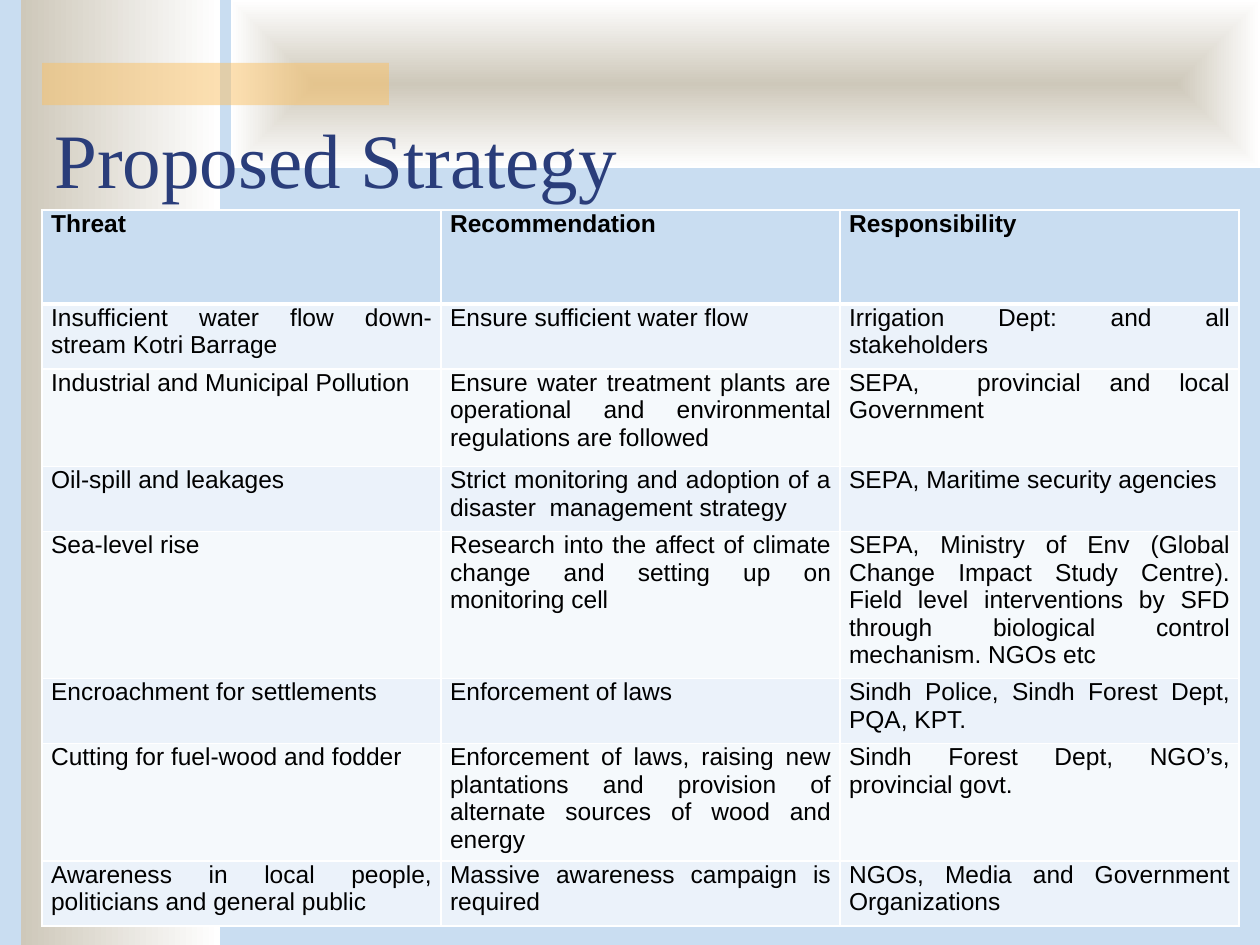
from lxml import etree
from pptx import Presentation
from pptx.dml.color import RGBColor
from pptx.enum.shapes import MSO_SHAPE
from pptx.enum.text import MSO_ANCHOR, PP_ALIGN
from pptx.oxml import parse_xml
from pptx.oxml.ns import nsdecls, qn
from pptx.util import Cm, Pt

COLORS = {
    "sky": "C9DDF1", "stone": "CEC8BA", "white": "FFFFFF", "amber": "FAC164",
    "navy": "2A3D7A", "black": "000000", "odd": "EBF2FA", "even": "F5F9FC",
}
HEADERS = ["Threat", "Recommendation", "Responsibility"]
STRATEGY = [
    (1.31, "Insufficient water flow down-stream Kotri Barrage",
     "Ensure sufficient water flow",
     "Irrigation Dept: and all stakeholders"),
    (1.96, "Industrial and Municipal Pollution",
     "Ensure water treatment plants are operational and environmental "
     "regulations are followed",
     "SEPA,  provincial and local Government"),
    (1.31, "Oil-spill and leakages",
     "Strict monitoring and adoption of a disaster  management strategy",
     "SEPA, Maritime security agencies"),
    (2.63, "Sea-level rise",
     "Research into the affect of climate change and setting up on "
     "monitoring cell",
     "SEPA, Ministry of Env (Global Change Impact Study Centre). Field level "
     "interventions by SFD through biological control mechanism. NGOs etc"),
    (1.31, "Encroachment for settlements",
     "Enforcement of laws",
     "Sindh Police, Sindh Forest Dept, PQA, KPT."),
    (1.96, "Cutting for fuel-wood and fodder",
     "Enforcement of laws, raising new plantations and provision of "
     "alternate sources of wood and energy",
     "Sindh Forest Dept, NGO’s, provincial govt."),
    (1.31, "Awareness in local people, politicians and general public",
     "Massive awareness campaign is required",
     "NGOs, Media and Government Organizations"),
]


def rgb(name):
    """Return the named colour."""
    return RGBColor.from_string(COLORS[name])


def write(tf, text, font="Arial", size=14, color="black", bold=False,
          align=PP_ALIGN.LEFT, after=0):
    """Write one formatted paragraph into a text frame."""
    p = tf.paragraphs[0]
    p.alignment, p.space_after = align, Pt(after)
    r = p.add_run()
    r.text = text
    r.font.name, r.font.size, r.font.bold = font, Pt(size), bold
    r.font.color.rgb = rgb(color)


def add_panel(s, x, y, w, h):
    """Add a plain rectangle without line or shadow."""
    sp = s.shapes.add_shape(MSO_SHAPE.RECTANGLE, Cm(x), Cm(y), Cm(w), Cm(h))
    sp.shadow.inherit = False
    sp.line.fill.background()
    return sp


def add_gradient_panel(s, x, y, w, h, from_center=False):
    """Add a panel fading from stone to white."""
    sp = add_panel(s, x, y, w, h)
    sp.fill.gradient()
    sp.fill.gradient_angle = 0
    for stop, name, pos in zip(sp.fill.gradient_stops, ("stone", "white"), (0, 1)):
        stop.color.rgb, stop.position = rgb(name), pos
    if from_center:
        grad = sp._element.spPr.find(qn("a:gradFill"))
        grad.replace(grad.find(qn("a:lin")), parse_xml(
            f'<a:path {nsdecls("a")} path="shape"><a:fillToRect l="50000" '
            't="50000" r="50000" b="50000"/></a:path>'))


def add_backdrop(s, x, y, w, h):
    """Add the side band, the top band and the translucent accent bar."""
    add_gradient_panel(s, x + 0.42, y, 4.02, h)
    add_gradient_panel(s, x + 4.66, y, w - 4.66, 3.39, from_center=True)
    bar = add_panel(s, x + 0.85, y + 1.27, 6.99, 0.85)
    bar.fill.solid()
    bar.fill.fore_color.rgb = rgb("amber")
    color = bar._element.spPr.find(qn("a:solidFill"))[0]
    etree.SubElement(color, qn("a:alpha"), val="50000")


def add_title(s, x, y, w, h, text):
    """Add the slide title resting on the bottom of its box."""
    tf = s.shapes.add_textbox(Cm(x), Cm(y), Cm(w), Cm(h)).text_frame
    tf.word_wrap = True
    tf.vertical_anchor = MSO_ANCHOR.BOTTOM
    write(tf, text, font="Times New Roman", size=44, color="navy")


def set_borders(cell, top=1, bottom=1):
    """Draw white borders on all sides of a cell."""
    tc_pr = cell._tc.get_or_add_tcPr()
    for side, width in (("L", 1), ("R", 1), ("T", top), ("B", bottom)):
        tc_pr.append(parse_xml(
            f'<a:ln{side} {nsdecls("a")} w="{Pt(width)}"><a:solidFill>'
            f'<a:srgbClr val="{COLORS["white"]}"/></a:solidFill></a:ln{side}>'))


def add_strategy_table(s, x, y, w):
    """Add the table of threats, recommendations and responsibilities."""
    rows = [(1.9, *HEADERS), *STRATEGY]
    height = sum(row[0] for row in rows)
    table = s.shapes.add_table(len(rows), len(HEADERS), Cm(x), Cm(y),
                               Cm(w), Cm(height)).table
    for col in table.columns:
        col.width = Cm(w / len(HEADERS))
    for i, (row_height, *texts) in enumerate(rows):
        table.rows[i].height = Cm(row_height)
        fill = "sky" if i == 0 else "odd" if i % 2 else "even"
        for cell, text in zip(table.rows[i].cells, texts):
            cell.margin_left = cell.margin_right = Cm(0.18)
            cell.margin_top = cell.margin_bottom = 0
            set_borders(cell, top=3 if i == 1 else 1, bottom=3 if i == 0 else 1)
            cell.fill.solid()
            cell.fill.fore_color.rgb = rgb(fill)
            write(cell.text_frame, text, bold=i == 0,
                  align=PP_ALIGN.JUSTIFY, after=10)


def main():
    """Build the slide and save it."""
    prs = Presentation()
    prs.slide_width, prs.slide_height = Cm(25.4), Cm(19.05)
    s = prs.slides.add_slide(prs.slide_layouts[6])
    s.background.fill.solid()
    s.background.fill.fore_color.rgb = rgb("sky")
    add_backdrop(s, 0, 0, 25.4, 19.05)
    add_title(s, 0.85, 2.12, 23.71, 2.12, "Proposed Strategy")
    add_strategy_table(s, 0.85, 4.23, 24.13)
    prs.save("out.pptx")


if __name__ == "__main__":
    main()
